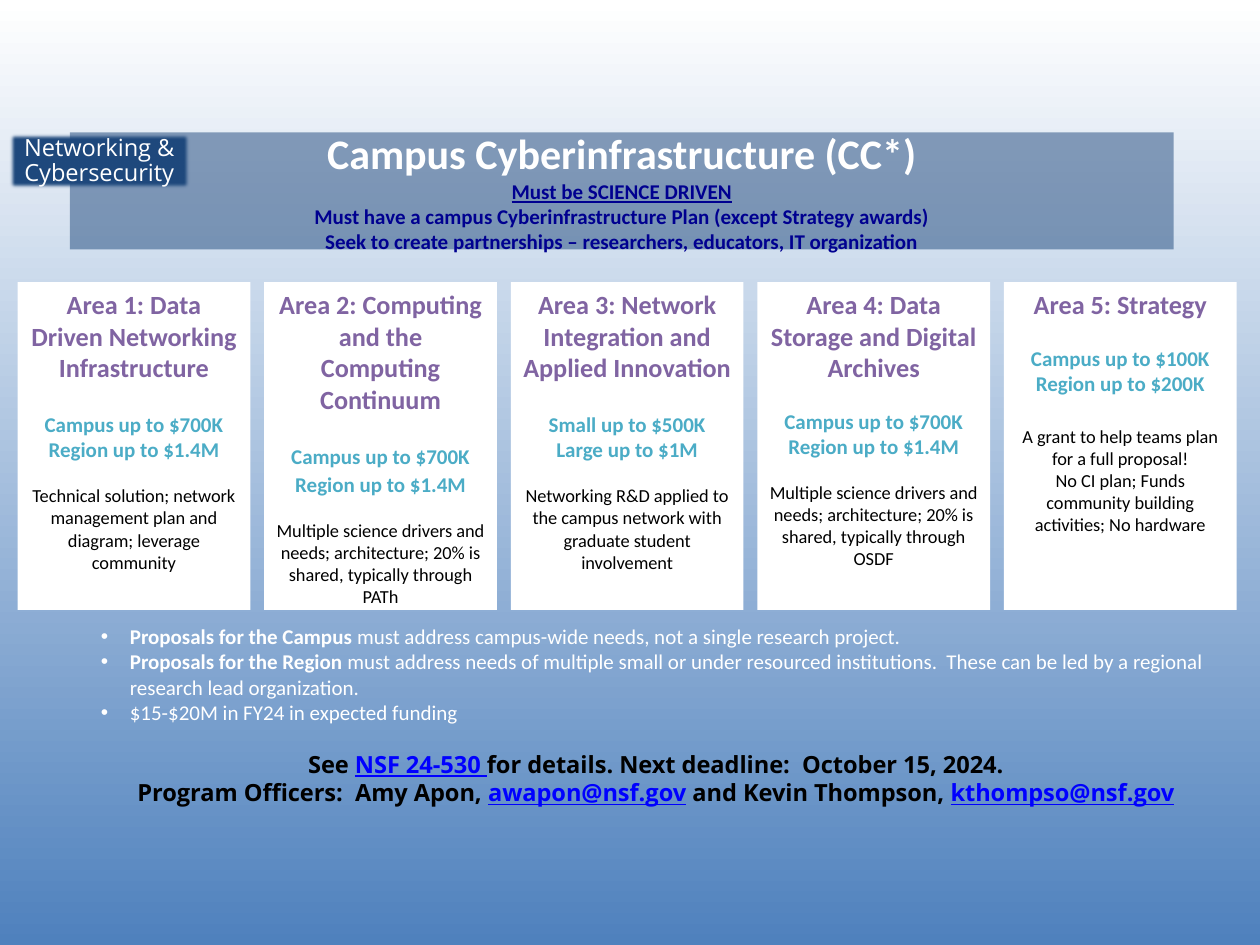
from pptx import Presentation
from pptx.dml.color import RGBColor
from pptx.enum.shapes import MSO_SHAPE
from pptx.enum.text import MSO_ANCHOR, PP_ALIGN
from pptx.oxml.ns import qn
from pptx.util import Pt
from lxml.etree import SubElement

COLORS = {
    "navy": "1F497D", "sky": "4F81BD", "white": "FFFFFF", "black": "000000",
    "ink": "000090", "purple": "8064A2", "teal": "4BACC6", "link": "0000FF",
}
CARD_LEFT, CARD_TOP, CARD_WIDTH, CARD_HEIGHT, CARD_PITCH = 10.1, 161.3, 133, 187.2, 140.9

AREAS = [
    ("Area 1: Data Driven Networking Infrastructure", 16.5,
     ["Campus up to $700K", "Region up to $1.4M"], 0, 12.8,
     ["Technical solution; network management plan and diagram; leverage community"]),
    ("Area 2: Computing and the Computing Continuum", 16.5,
     ["Campus up to $700K", "Region up to $1.4M"], 1.8, 12.8,
     ["Multiple science drivers and needs; architecture; 20% is shared, typically through PATh"]),
    ("Area 3: Network Integration and Applied Innovation", 16.5,
     ["Small up to $500K", "Large up to $1M"], 0, 12.8,
     ["Networking R&D applied to the campus network with graduate student involvement"]),
    ("Area 4: Data\vStorage and Digital Archives", 14.6,
     ["Campus up to $700K", "Region up to $1.4M"], 0, 12.8,
     ["Multiple science drivers and needs; architecture; 20% is shared, typically through OSDF"]),
    ("Area 5: Strategy", 14.6,
     ["Campus up to $100K", "Region up to $200K"], 0, 16.5,
     ["A grant to help teams plan for a full proposal!",
      "No CI plan; Funds community building activities; No hardware"]),
]
BULLETS = [
    ("Proposals for the Campus",
     " must address campus-wide needs, not a single research project."),
    ("Proposals for the Region",
     " must address needs of multiple small or under resourced institutions.  "
     "These can be led by a regional research lead organization."),
    ("", "$15-$20M in FY24 in expected funding"),
]
CONTACTS = [
    [("See ", False), ("NSF 24-530 ", True),
     ("for details. Next deadline:  October 15, 2024.", False)],
    [("Program Officers:  Amy Apon, ", False), ("awapon@nsf.gov", True),
     (" and Kevin Thompson, ", False), ("kthompso@nsf.gov", True)],
]


def rgb(name):
    return RGBColor.from_string(COLORS[name])


def set_font(font, size, color, bold=False, name="Calibri"):
    font.name, font.size, font.bold = name, Pt(size), bold
    font.color.rgb = rgb(color)


def set_margins(frame, side, edge):
    frame.margin_left = frame.margin_right = Pt(side)
    frame.margin_top = frame.margin_bottom = Pt(edge)


def add_panel(page, left, top, width, height, color, anchor=MSO_ANCHOR.MIDDLE):
    panel = page.shapes.add_shape(
        MSO_SHAPE.RECTANGLE, Pt(left), Pt(top), Pt(width), Pt(height))
    panel.shadow.inherit = False
    panel.fill.solid()
    panel.fill.fore_color.rgb = rgb(color)
    panel.line.fill.background()
    panel.text_frame.word_wrap = True
    panel.text_frame.vertical_anchor = anchor
    return panel


def next_para(frame, before=0, align=PP_ALIGN.CENTER):
    para = frame.paragraphs[0]
    if para.runs:
        para = frame.add_paragraph()
        para.space_before = Pt(before)
    para.alignment = align
    return para


def add_span(para, text):
    span = para.add_run()
    span.text = text
    return span


def add_line(frame, text, size, color, bold=False, before=0):
    para = next_para(frame, before)
    set_font(para.font, size, color, bold)
    parts = text.split("\v")
    add_span(para, parts[0])
    for part in parts[1:]:
        para.add_line_break()
        add_span(para, part)


def add_title(page):
    banner = add_panel(page, 40, 75.6, 630.7, 67, "navy")
    color = banner._element.spPr.find(".//" + qn("a:srgbClr"))
    SubElement(color, qn("a:alpha"), val="51000")
    frame = banner.text_frame
    add_line(frame, "Campus Cyberinfrastructure (CC*)", 24, "white", True)
    for text in ("Must be SCIENCE DRIVEN",
                 "Must have a campus Cyberinfrastructure Plan (except Strategy awards)",
                 "Seek to create partnerships – researchers, educators, IT organization"):
        add_line(frame, text, 12, "ink", True)
    frame.paragraphs[1].font.underline = True


def add_badge(page):
    badge = add_panel(page, 4.5, 75.6, 104.4, 33.1, "navy")
    badge.line.color.rgb = rgb("black")
    badge.line.width = Pt(0.75)
    effects = badge._element.spPr.find(qn("a:effectLst"))
    SubElement(effects, qn("a:softEdge"), rad=str(Pt(2.5)))
    set_margins(badge.text_frame, 5, 2.9)
    para = next_para(badge.text_frame)
    para.line_spacing = 0.9
    set_font(para.font, 13.5, "white", name="Open Sans")
    add_span(para, "Networking & Cybersecurity")


def add_area(page, index, heading, gap, budgets, budget_gap, detail_gap, details):
    card = add_panel(page, CARD_LEFT + index * CARD_PITCH, CARD_TOP,
                     CARD_WIDTH, CARD_HEIGHT, "white", MSO_ANCHOR.TOP)
    frame = card.text_frame
    add_line(frame, heading, 15, "purple", True)
    for text, before in zip(budgets, (gap, budget_gap)):
        add_line(frame, text, 12, "teal", True, before)
    for number, text in enumerate(details):
        add_line(frame, text, 10.5, "black", before=0 if number else detail_gap)


def add_bullet(frame, lead, rest):
    para = next_para(frame, align=PP_ALIGN.LEFT)
    props = para._p.get_or_add_pPr()
    props.set("marL", str(Pt(16.6)))
    props.set("indent", str(-Pt(16.6)))
    SubElement(props, qn("a:buFont"), typeface="Arial")
    SubElement(props, qn("a:buChar"), char="•")
    set_font(para.font, 12, "white")
    if lead:
        add_span(para, lead).font.bold = True
    add_span(para, rest)


def add_contact(frame, parts, before):
    para = next_para(frame, before)
    set_font(para.font, 13.5, "black", True, "Open Sans")
    for text, linked in parts:
        span = add_span(para, text)
        if linked:
            span.font.color.rgb = rgb("link")
            span.font.underline = True


def add_notes_box(page):
    box = page.shapes.add_textbox(Pt(52.6), Pt(353.5), Pt(644.4), Pt(121.7))
    frame = box.text_frame
    frame.word_wrap = True
    set_margins(frame, 5, 2.9)
    for lead, rest in BULLETS:
        add_bullet(frame, lead, rest)
    for number, parts in enumerate(CONTACTS):
        add_contact(frame, parts, 0 if number else 14.6)


def set_background(page):
    fill = page.background.fill
    fill.gradient()
    fill.gradient_angle = 90
    for stop, color, position in zip(fill.gradient_stops, ("sky", "white"), (0, 1)):
        stop.color.rgb = rgb(color)
        stop.position = position


def main():
    deck = Presentation()
    deck.slide_width, deck.slide_height = Pt(720), Pt(540)
    page = deck.slides.add_slide(deck.slide_layouts[6])
    set_background(page)
    add_title(page)
    add_badge(page)
    for index, area in enumerate(AREAS):
        add_area(page, index, *area)
    add_notes_box(page)
    deck.save("out.pptx")


if __name__ == "__main__":
    main()
